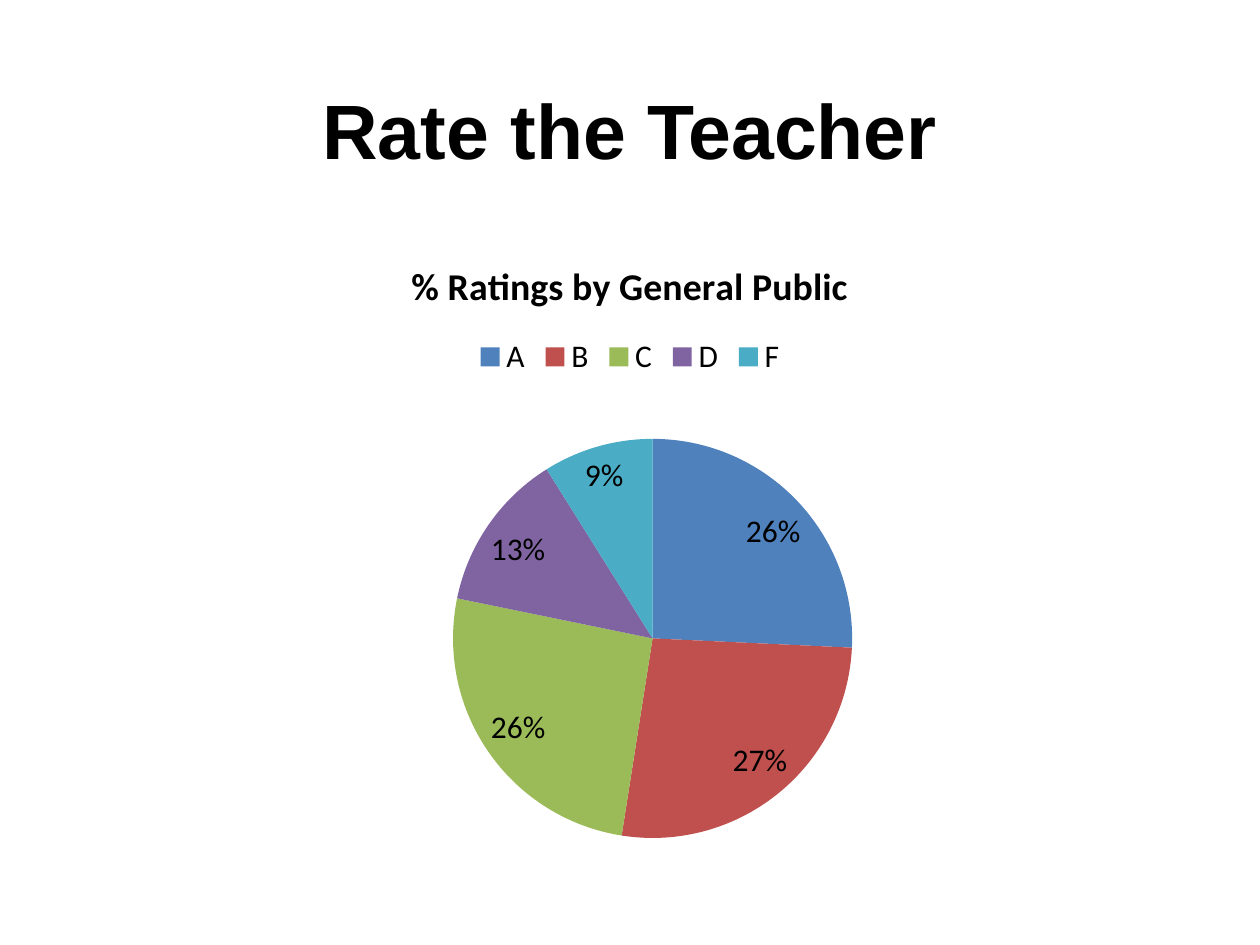
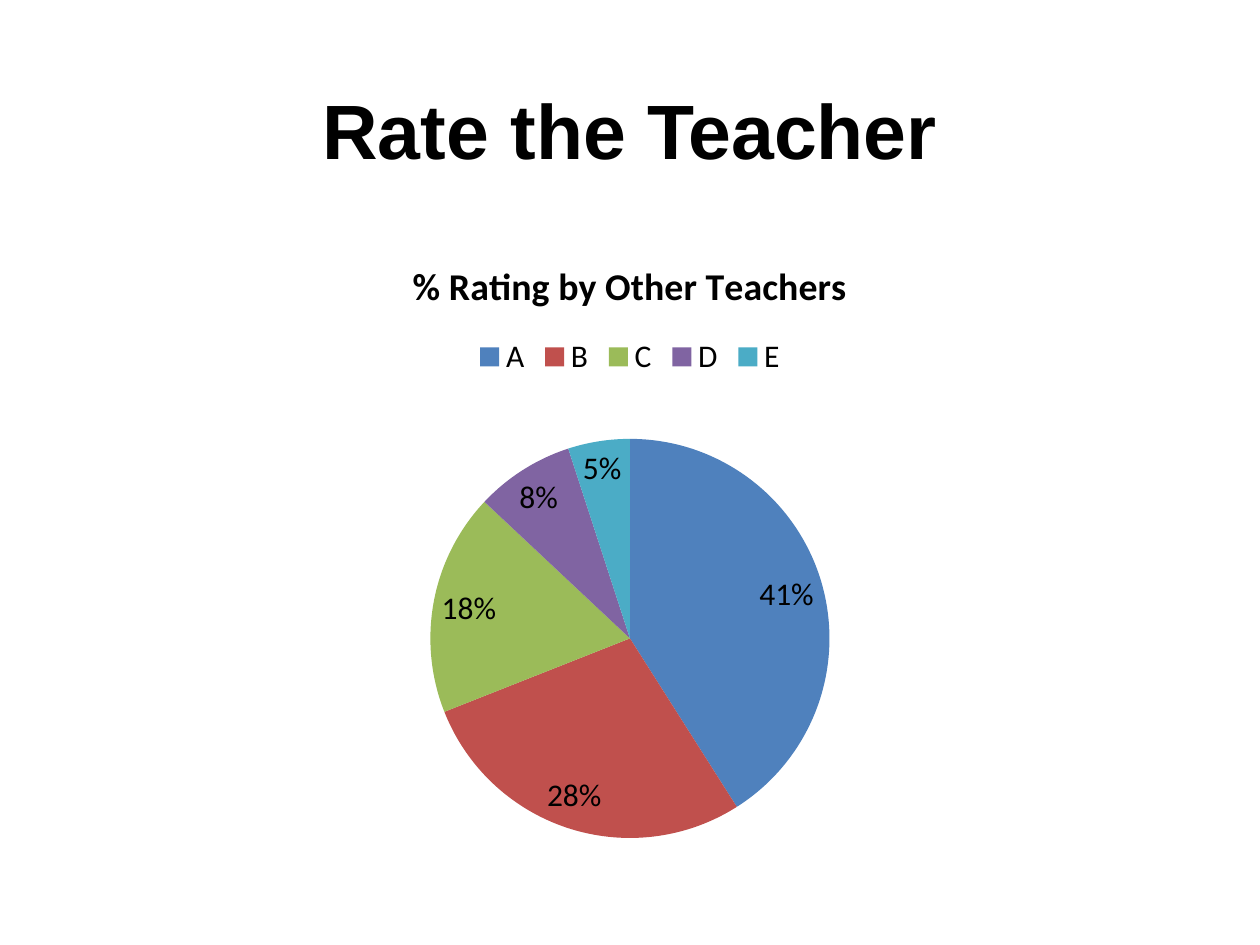
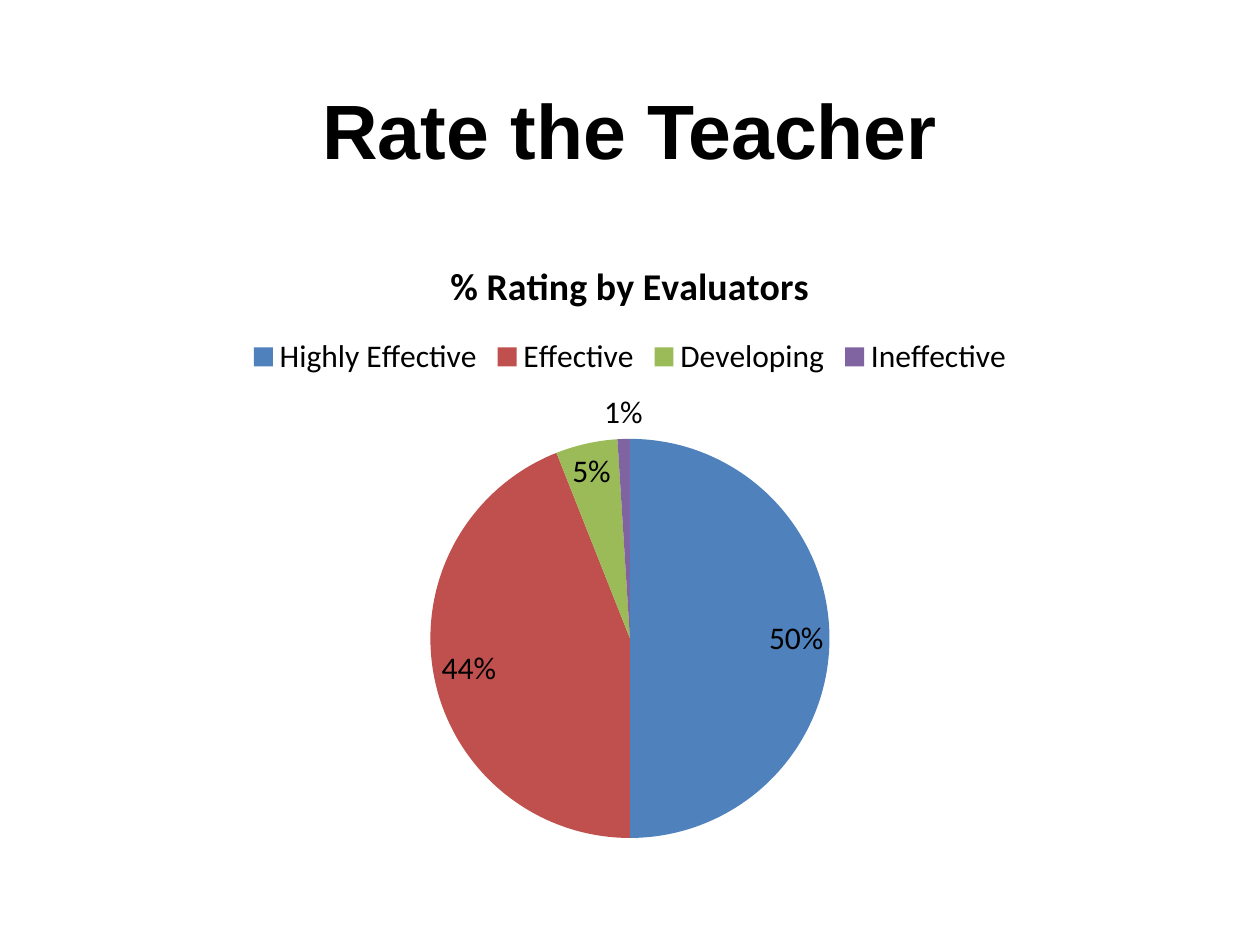
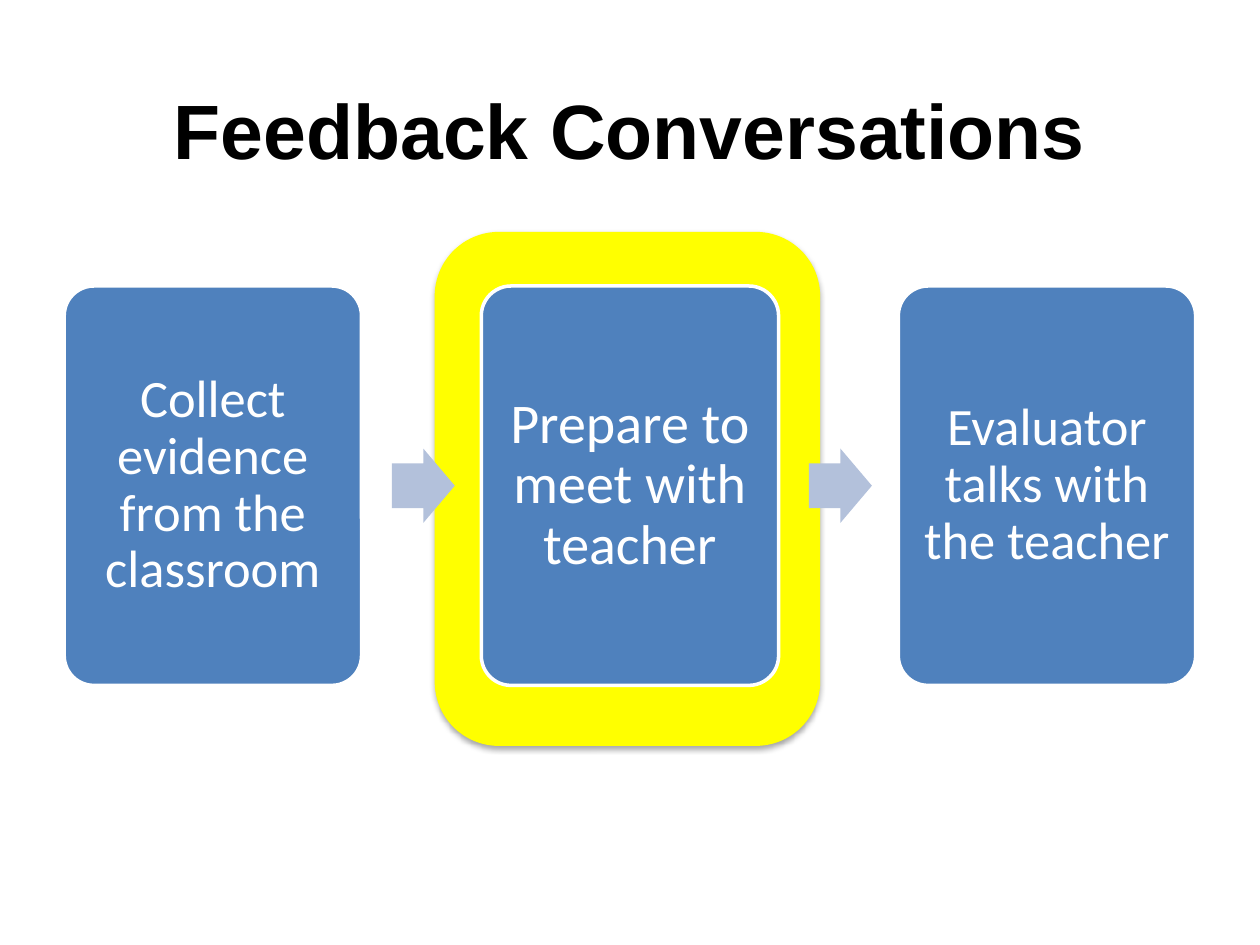
"""Build four slides on teacher ratings and feedback conversations."""
from lxml.etree import fromstring
from pptx import Presentation
from pptx.chart.data import CategoryChartData
from pptx.dml.color import RGBColor
from pptx.enum.chart import XL_CHART_TYPE as ChartType
from pptx.enum.chart import XL_LABEL_POSITION as LabelPosition
from pptx.enum.chart import XL_LEGEND_POSITION as LegendPosition
from pptx.enum.shapes import MSO_SHAPE as Shape
from pptx.enum.text import MSO_ANCHOR as Anchor
from pptx.enum.text import PP_ALIGN as Align
from pptx.oxml.ns import nsdecls
from pptx.util import Inches, Pt

BLACK, WHITE, BLUE, YELLOW, PALE = "000000", "FFFFFF", "4F81BD", "FFFF00", "B3C1DB"
SLICE_COLOURS = [BLUE, "C0504D", "9BBB59", "8064A2", "4BACC6"]
TITLE_FONT = {"name": "Arial", "size": Pt(44), "bold": True}
CHART_FONT = {"name": "Calibri", "size": Pt(18)}
CHART_TITLE_FONT = {"name": "Calibri", "size": Pt(21.6), "bold": True}


def colour(hex_string):
    """Turn a hex string into a colour."""
    return RGBColor.from_string(hex_string)


def style(font, values, hex_string):
    """Set the font attributes and its colour."""
    for attribute, value in values.items():
        setattr(font, attribute, value)
    font.color.rgb = colour(hex_string)


prs = Presentation()
prs.slide_width, prs.slide_height = Inches(10), Inches(7.5)

titles = ["Rate the Teacher"] * 3 + ["Feedback Conversations"]
slides = []
for title in titles:
    slide = prs.slides.add_slide(prs.slide_layouts[6])
    heading = slide.shapes.add_textbox(Inches(0.5), Inches(0.4), Inches(9), Inches(1.25)).text_frame
    heading.word_wrap = True
    heading.vertical_anchor = Anchor.MIDDLE
    line = heading.paragraphs[0]
    line.text = title
    line.alignment = Align.CENTER
    style(line.font, TITLE_FONT, BLACK)
    slides.append(slide)

ratings = [
    ("% Ratings by General Public", "Series 1", list("ABCDF"), [26, 27, 26, 13, 9], 0.34),
    ("% Rating by Other Teachers", "% Rating by Other Teachers", list("ABCDE"), [41, 28, 18, 8, 5], 0.32),
    ("% Rating by Evaluators", "% Rating by Evaluators",
     ["Highly Effective", "Effective", "Developing", "Ineffective"], [50, 44, 5, 1], 0.32),
]
for slide, (caption, series_name, grades, shares, pie_left) in zip(slides, ratings):
    rating_data = CategoryChartData()
    rating_data.categories = grades
    rating_data.add_series(series_name, shares)
    chart = slide.shapes.add_chart(
        ChartType.PIE, Inches(0.5), Inches(1.85), Inches(9), Inches(4.95), rating_data).chart
    style(chart.font, CHART_FONT, BLACK)

    chart.has_title = True
    chart.chart_title.text_frame.text = caption
    style(chart.chart_title.text_frame.paragraphs[0].runs[0].font, CHART_TITLE_FONT, BLACK)
    chart.chart_title.include_in_layout = False
    chart.has_legend = True
    chart.legend.position = LegendPosition.TOP
    chart.legend.include_in_layout = False

    pie = chart.plots[0]
    pie.vary_by_categories = True
    for index in range(len(grades)):
        fill = pie.series[0].points[index].format.fill
        fill.solid()
        fill.fore_color.rgb = colour(SLICE_COLOURS[index])
    pie.has_data_labels = True
    label_format = {"show_percentage": True, "show_value": False, "number_format": "0%",
                    "number_format_is_linked": False, "position": LabelPosition.BEST_FIT}
    for attribute, value in label_format.items():
        setattr(pie.data_labels, attribute, value)
    style(pie.data_labels.font, CHART_FONT, BLACK)

    plot_area = chart.element.chart.plotArea
    for layout in plot_area.findall("{*}layout"):
        plot_area.remove(layout)
    plot_area.insert(0, fromstring(
        f'<c:layout {nsdecls("c")}><c:manualLayout><c:layoutTarget val="inner"/>'
        f'<c:xMode val="edge"/><c:yMode val="edge"/><c:x val="{pie_left}"/><c:y val="0.33"/>'
        '<c:w val="0.36"/><c:h val="0.64"/></c:manualLayout></c:layout>'))

feedback = slides[3].shapes
highlight = feedback.add_shape(Shape.ROUNDED_RECTANGLE, Inches(3.45), Inches(1.84), Inches(3.06), Inches(4.08))
highlight.fill.solid()
highlight.fill.fore_color.rgb = colour(YELLOW)
highlight.line.fill.background()
highlight.element.spPr.append(fromstring(
    f'<a:effectLst {nsdecls("a")}><a:outerShdw blurRad="40000" dist="23000" dir="5400000" rotWithShape="0">'
    f'<a:srgbClr val="{BLACK}"><a:alpha val="35000"/></a:srgbClr></a:outerShdw></a:effectLst>'))

steps = [
    ("Collect evidence from the classroom", 30, 0.12),
    ("Prepare to meet with teacher", 32, 0.13),
    ("Evaluator talks with the teacher", 30, 0.12),
]
STEP_PITCH = 3.31
for number, (wording, size, inset) in enumerate(steps):
    left = 0.51 + number * STEP_PITCH
    step = feedback.add_shape(Shape.ROUNDED_RECTANGLE, Inches(left), Inches(2.27), Inches(2.36), Inches(3.17))
    step.adjustments[0] = 0.1
    step.shadow.inherit = False
    step.fill.solid()
    step.fill.fore_color.rgb = colour(BLUE)
    step.line.color.rgb = colour(WHITE)
    step.line.width = Pt(2)
    frame = step.text_frame
    frame_format = {"word_wrap": True, "vertical_anchor": Anchor.MIDDLE}
    for side in ("left", "top", "right", "bottom"):
        frame_format[f"margin_{side}"] = Inches(inset)
    for attribute, value in frame_format.items():
        setattr(frame, attribute, value)
    line = frame.paragraphs[0]
    line.text = wording
    line.alignment = Align.CENTER
    line.line_spacing = 0.9
    style(line.font, {"name": "Calibri", "size": Pt(size)}, WHITE)

    if number < len(steps) - 1:
        arrow = feedback.add_shape(Shape.RIGHT_ARROW, Inches(left + 2.6), Inches(3.56), Inches(0.5), Inches(0.59))
        arrow.adjustments[0] = 0.6
        arrow.shadow.inherit = False
        arrow.fill.solid()
        arrow.fill.fore_color.rgb = colour(PALE)
        arrow.line.fill.background()

prs.save("out.pptx")
